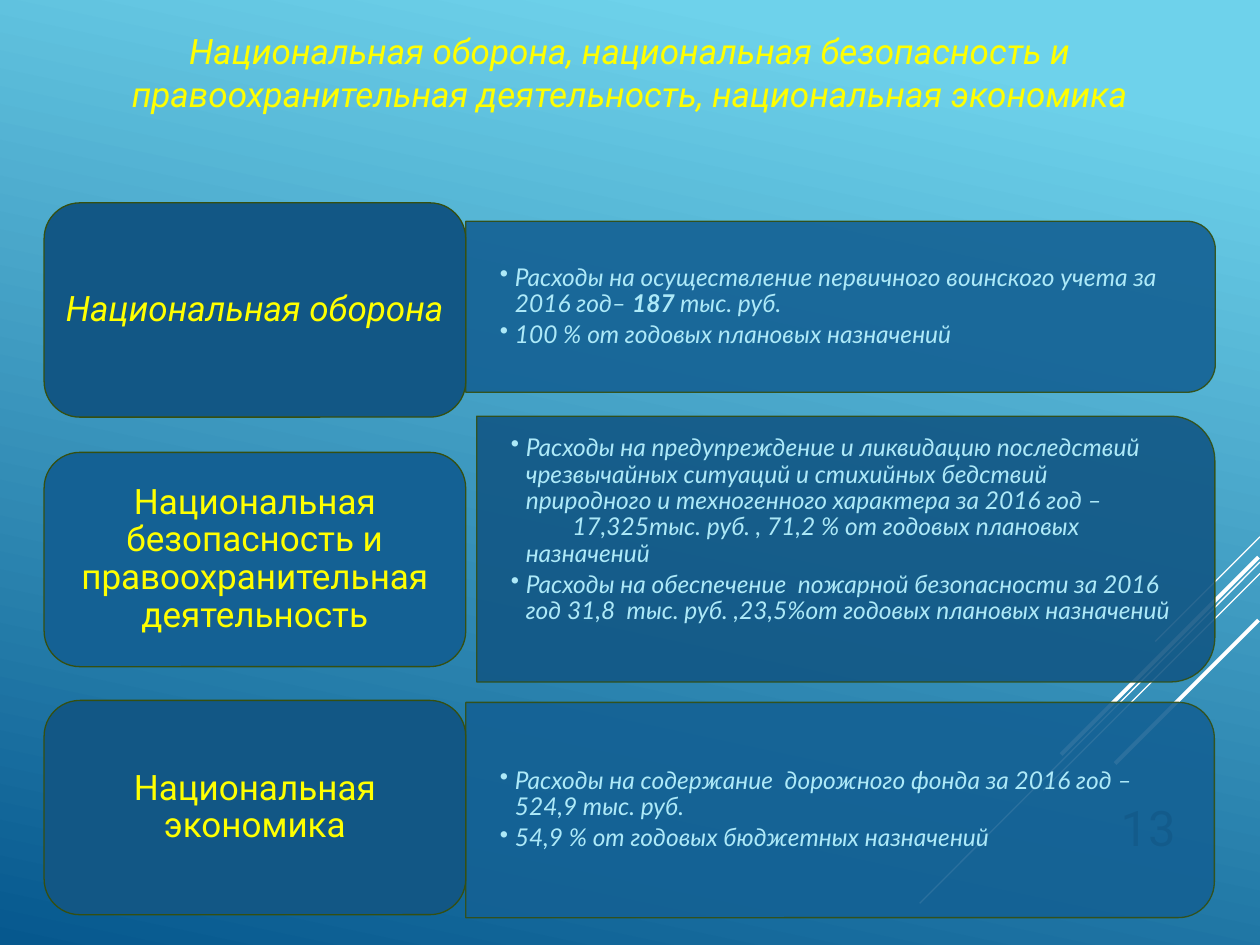
from dataclasses import dataclass

from lxml.etree import SubElement
from pptx import Presentation
from pptx.dml.color import RGBColor
from pptx.enum.shapes import MSO_CONNECTOR, MSO_SHAPE
from pptx.enum.text import MSO_ANCHOR, PP_ALIGN
from pptx.oxml.ns import qn
from pptx.util import Cm, Pt


@dataclass(frozen=True)
class Theme:
    sky: str = "6ED2EB"
    deep: str = "06588E"
    dark_panel: str = "125785"
    light_panel: str = "146194"
    outline: str = "354F10"
    heading: str = "FFFF00"
    detail: str = "ADE9F8"
    streak: str = "FFFFFF"
    number: str = "0A2A40"
    heading_font: str = "Roboto"
    detail_font: str = "Lato"
    heading_size: int = 20
    detail_size: int = 14
    number_size: int = 28


THEME = Theme()

# Start x, start y, end x, end y (cm), weight (pt)
STREAKS = [
    (25.4, 10.82, 23.29, 12.93, 0.75),
    (25.4, 11.33, 18.54, 18.21, 0.75),
    (25.4, 11.56, 21.03, 15.93, 0.75),
    (25.37, 11.23, 21.39, 15.21, 2.25),
    (25.37, 12.5, 22.48, 15.39, 2.25),
]

# Each detail paragraph is a list of (text, bold) pieces
SECTIONS = [
    dict(label="Национальная оборона", italic=True, label_top=4.09,
         label_color=THEME.dark_panel, panel_color=THEME.light_panel,
         panel_box=(9.39, 4.46, 15.11, 3.45), lift=0,
         details=[
             [("Расходы на осуществление первичного воинского учета за 2016 год– ", False),
              ("187 ", True), ("тыс. руб.", False)],
             [("100 % от годовых плановых назначений", False)]]),
    dict(label="Национальная безопасность и правоохранительная деятельность",
         italic=False, label_top=9.12,
         label_color=THEME.light_panel, panel_color=THEME.dark_panel,
         panel_box=(9.61, 8.39, 14.88, 5.36), lift=0.38,
         details=[
             [("Расходы на предупреждение и ликвидацию последствий чрезвычайных "
               "ситуаций и стихийных бедствий природного и техногенного характера "
               "за 2016 год –\v\t17,325тыс. руб. , 71,2 % от годовых плановых назначений", False)],
             [("Расходы на обеспечение  пожарной безопасности за 2016 год 31,8  тыс. руб. ,"
               "23,5%от годовых плановых назначений", False)]]),
    dict(label="Национальная экономика", italic=False, label_top=14.12,
         label_color=THEME.dark_panel, panel_color=THEME.light_panel,
         panel_box=(9.39, 14.16, 15.09, 4.34), lift=0,
         details=[
             [("Расходы на содержание  дорожного фонда за 2016 год – 524,9 тыс. руб.", False)],
             [("54,9 % от годовых бюджетных назначений", False)]]),
]


def rgb(code):
    return RGBColor.from_string(code)


def style_font(paragraph, family, size, color, italic=False):
    font = paragraph.font
    font.name, font.size, font.italic = family, Pt(size), italic
    font.color.rgb = rgb(color)


def set_insets(frame, horizontal, vertical):
    frame.margin_left = frame.margin_right = Cm(horizontal)
    frame.margin_top = frame.margin_bottom = Cm(vertical)


def add_card(slide, preset, box, color):
    card = slide.shapes.add_shape(preset, *map(Cm, box))
    card.shadow.inherit = False
    card.fill.solid()
    card.fill.fore_color.rgb = rgb(color)
    card.line.color.rgb = rgb(THEME.outline)
    card.line.width = Pt(0.75)
    return card


def add_text_area(slide, box):
    frame = slide.shapes.add_textbox(*map(Cm, box)).text_frame
    frame.word_wrap = True
    return frame


def add_bullet(paragraph):
    properties = paragraph._p.get_or_add_pPr()
    properties.set("marL", str(Cm(0.3)))
    properties.set("indent", str(-Cm(0.3)))
    SubElement(properties, qn("a:buChar")).set("char", "•")
    stops = SubElement(properties, qn("a:tabLst"))
    stop = SubElement(stops, qn("a:tab"))
    stop.set("pos", str(Cm(1.24)))
    stop.set("algn", "l")


def draw_backdrop(slide):
    fill = slide.background.fill
    fill.gradient()
    fill.gradient_angle = 258
    for stop, position, color in zip(fill.gradient_stops, (0.1, 1), (THEME.sky, THEME.deep)):
        stop.position = position
        stop.color.rgb = rgb(color)
    for x1, y1, x2, y2, weight in STREAKS:
        streak = slide.shapes.add_connector(
            MSO_CONNECTOR.STRAIGHT, Cm(x1), Cm(y1), Cm(x2), Cm(y2))
        streak.line.color.rgb = rgb(THEME.streak)
        streak.line.width = Pt(weight)
        SubElement(streak._element.spPr, qn("a:effectLst"))


def draw_page_number(slide, box):
    number = add_text_area(slide, box).paragraphs[0]
    number.text = "13"
    number.alignment = PP_ALIGN.RIGHT
    style_font(number, THEME.heading_font, THEME.number_size, THEME.number)


def draw_title(slide, box):
    title = add_text_area(slide, box).paragraphs[0]
    title.text = ("Национальная оборона, национальная безопасность и "
                  "правоохранительная деятельность, национальная экономика")
    title.alignment = PP_ALIGN.CENTER
    style_font(title, THEME.heading_font, THEME.heading_size, THEME.heading, True)


def draw_panel(slide, box, color, details, lift):
    left, top, width, height = box
    # A quarter turn puts the two rounded corners on the right
    turned = (left + (width - height) / 2, top + (height - width) / 2, height, width)
    panel = add_card(slide, MSO_SHAPE.ROUND_2_SAME_RECTANGLE, turned, color)
    panel.rotation = 90
    for color_node in panel._element.spPr.iter(qn("a:srgbClr")):
        SubElement(color_node, qn("a:alpha")).set("val", "90000")

    frame = add_text_area(slide, (left, top - lift, width - 0.2, height))
    frame.vertical_anchor = MSO_ANCHOR.MIDDLE
    set_insets(frame, 0.69, 0)
    for index, pieces in enumerate(details):
        paragraph = frame.paragraphs[0] if index == 0 else frame.add_paragraph()
        paragraph.line_spacing = 0.9
        paragraph.space_after = Pt(2.5)
        add_bullet(paragraph)
        style_font(paragraph, THEME.detail_font, THEME.detail_size, THEME.detail, True)
        for text, bold in pieces:
            for line_number, line in enumerate(text.split("\v")):
                if line_number:
                    paragraph.add_line_break()
                run = paragraph.add_run()
                run.text = line
                run.font.bold = bold


def draw_label(slide, box, color, text, italic):
    card = add_card(slide, MSO_SHAPE.ROUNDED_RECTANGLE, box, color)
    frame = card.text_frame
    frame.word_wrap = True
    frame.vertical_anchor = MSO_ANCHOR.MIDDLE
    set_insets(frame, 0.2, 0.1)
    label = frame.paragraphs[0]
    label.text = text
    label.alignment = PP_ALIGN.CENTER
    label.line_spacing = 0.9
    style_font(label, THEME.heading_font, THEME.heading_size, THEME.heading, italic)


def main():
    deck = Presentation()
    deck.slide_width, deck.slide_height = Cm(25.4), Cm(19.05)
    slide = deck.slides.add_slide(deck.slide_layouts[6])

    # Background, page number and heading
    draw_backdrop(slide)
    draw_page_number(slide, (21.5, 15.95, 2.45, 1.45))
    draw_title(slide, (1.4, 0.48, 22.6, 2.82))

    # Spending sections: details on the right, label on the left
    for section in SECTIONS:
        draw_panel(slide, section["panel_box"], section["panel_color"],
                   section["details"], section["lift"])
        draw_label(slide, (0.89, section["label_top"], 8.5, 4.32),
                   section["label_color"], section["label"], section["italic"])

    deck.save("out.pptx")


if __name__ == "__main__":
    main()
